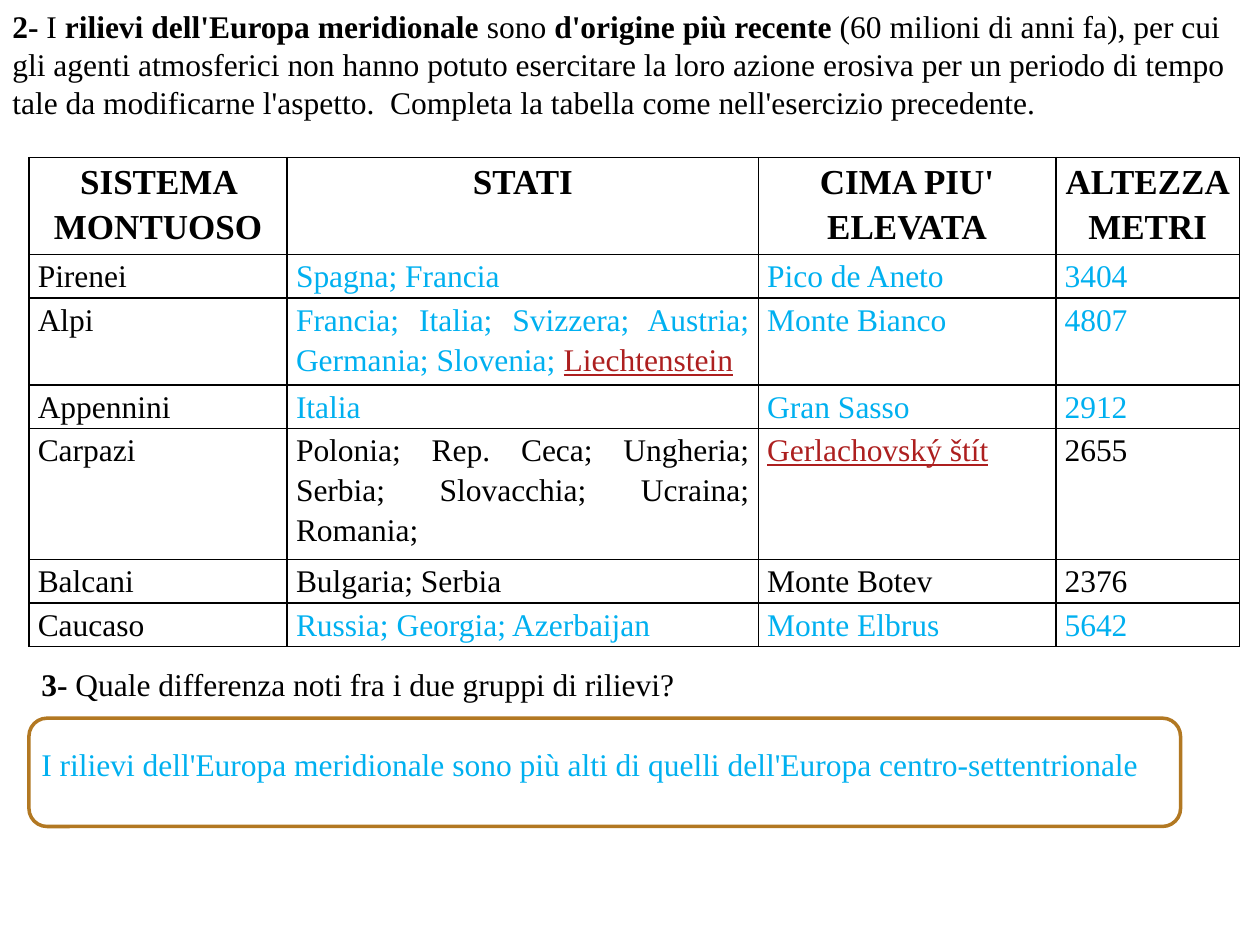
from lxml.etree import SubElement
from pptx import Presentation
from pptx.dml.color import RGBColor
from pptx.enum.shapes import MSO_SHAPE
from pptx.enum.text import MSO_ANCHOR, MSO_AUTO_SIZE, PP_ALIGN
from pptx.oxml.ns import qn
from pptx.util import Inches, Pt

BLACK, BLUE, RED, WHITE, BROWN = "000000", "00B0F0", "AD1F1F", "FFFFFF", "B27822"


def rgb(color):
    return RGBColor.from_string(color)


def add_run(p, text, color=BLACK, size=18, bold=False):
    r = p.add_run()
    r.text = text
    r.font.name = "Times New Roman"
    r.font.size = Pt(size)
    r.font.bold = bold
    r.font.underline = color == RED
    r.font.color.rgb = rgb(color)


prs = Presentation()
prs.slide_width, prs.slide_height = Inches(10), Inches(7.5)
s = prs.slides.add_slide(prs.slide_layouts[6])

# Answer frame, behind the answer text
sp = s.shapes.add_shape(MSO_SHAPE.ROUNDED_RECTANGLE,
                        Inches(0.23), Inches(5.7), Inches(9.14), Inches(0.86))
sp.shadow.inherit = False
sp.fill.solid()
sp.fill.fore_color.rgb = rgb(WHITE)
sp.line.color.rgb = rgb(BROWN)
sp.line.width = Pt(2)

# Exercise texts: box, then runs of text, colour and bold
texts = [
    ((0, 0, 10, 1.01), [
        ("2- ", BLACK, True),
        ("I ", BLACK, False),
        ("rilievi dell'Europa meridionale ", BLACK, True),
        ("sono ", BLACK, False),
        ("d'origine più recente", BLACK, True),
        (" (60 milioni di anni fa), per cui gli agenti atmosferici non hanno potuto "
         "esercitare la loro azione erosiva per un periodo di tempo tale da modificarne "
         "l'aspetto.  Completa la tabella come nell'esercizio precedente.", BLACK, False),
    ]),
    ((0.23, 5.23, 8.67, 0.4), [
        ("3- ", BLACK, True),
        ("Quale differenza noti fra i due gruppi di rilievi?", BLACK, False),
    ]),
    ((0.23, 5.86, 8.98, 0.4), [
        ("I rilievi dell'Europa meridionale sono più alti di quelli "
         "dell'Europa centro-settentrionale", BLUE, False),
    ]),
]
for box, runs in texts:
    tf = s.shapes.add_textbox(*map(Inches, box)).text_frame
    tf.word_wrap = True
    tf.auto_size = MSO_AUTO_SIZE.SHAPE_TO_FIT_TEXT
    tf.vertical_anchor = MSO_ANCHOR.MIDDLE
    for text, color, bold in runs:
        add_run(tf.paragraphs[0], text, color, bold=bold)

# Mountain table: each cell is a list of paragraphs or coloured runs
header = [["SISTEMA MONTUOSO"], ["STATI"], ["CIMA PIU' ELEVATA"], ["ALTEZZA", "METRI"]]
mountains = [
    ("Pirenei", [("Spagna; Francia", BLUE)], ("Pico de Aneto", BLUE), ("3404", BLUE)),
    ("Alpi", [("Francia; Italia; Svizzera; Austria; Germania; Slovenia; ", BLUE),
              ("Liechtenstein", RED)], ("Monte Bianco", BLUE), ("4807", BLUE)),
    ("Appennini", [("Italia", BLUE)], ("Gran Sasso", BLUE), ("2912", BLUE)),
    ("Carpazi", [("Polonia; Rep. Ceca; Ungheria; Serbia; Slovacchia; Ucraina; Romania; ", BLACK)],
     ("Gerlachovský štít", RED), ("2655", BLACK)),
    ("Balcani", [("Bulgaria; Serbia", BLACK)], ("Monte Botev", BLACK), ("2376", BLACK)),
    ("Caucaso", [("Russia; Georgia; Azerbaijan", BLUE)], ("Monte Elbrus", BLUE), ("5642", BLUE)),
]
rows = [[[[(line, BLACK)] for line in cell] for cell in header]]
for name, states, peak, height in mountains:
    rows.append([[[(name, BLACK)]], [states], [[peak]], [[height]]])

widths = [2.05, 3.74, 2.36, 1.46]
heights = [0.77, 0.34, 0.69, 0.34, 1.04, 0.34, 0.34]
table = s.shapes.add_table(len(rows), len(widths), Inches(0.23), Inches(1.25),
                           Inches(sum(widths)), Inches(sum(heights))).table
for column, width in zip(table.columns, widths):
    column.width = Inches(width)

for i, (row, height) in enumerate(zip(rows, heights)):
    table.rows[i].height = Inches(height)
    for j, paragraphs in enumerate(row):
        cell = table.cell(i, j)
        cell.margin_left = cell.margin_right = Inches(0.07)
        cell.margin_top = cell.margin_bottom = 0
        tf = cell.text_frame
        for k, runs in enumerate(paragraphs):
            p = tf.add_paragraph() if k else tf.paragraphs[0]
            p.alignment = PP_ALIGN.JUSTIFY if i else PP_ALIGN.CENTER
            p.line_spacing = 1.15
            for text, color in runs:
                add_run(p, text, color, size=18 if i else 20, bold=i == 0)
        p.space_after = Pt(10)

        # Cell borders come before the fill in the XML
        tcPr = cell._tc.get_or_add_tcPr()
        for side in ("a:lnL", "a:lnR", "a:lnT", "a:lnB"):
            ln = SubElement(tcPr, qn(side), w=str(Pt(1)))
            SubElement(SubElement(ln, qn("a:solidFill")), qn("a:srgbClr"), val=BLACK)
        cell.fill.solid()
        cell.fill.fore_color.rgb = rgb(WHITE)

prs.save("out.pptx")
